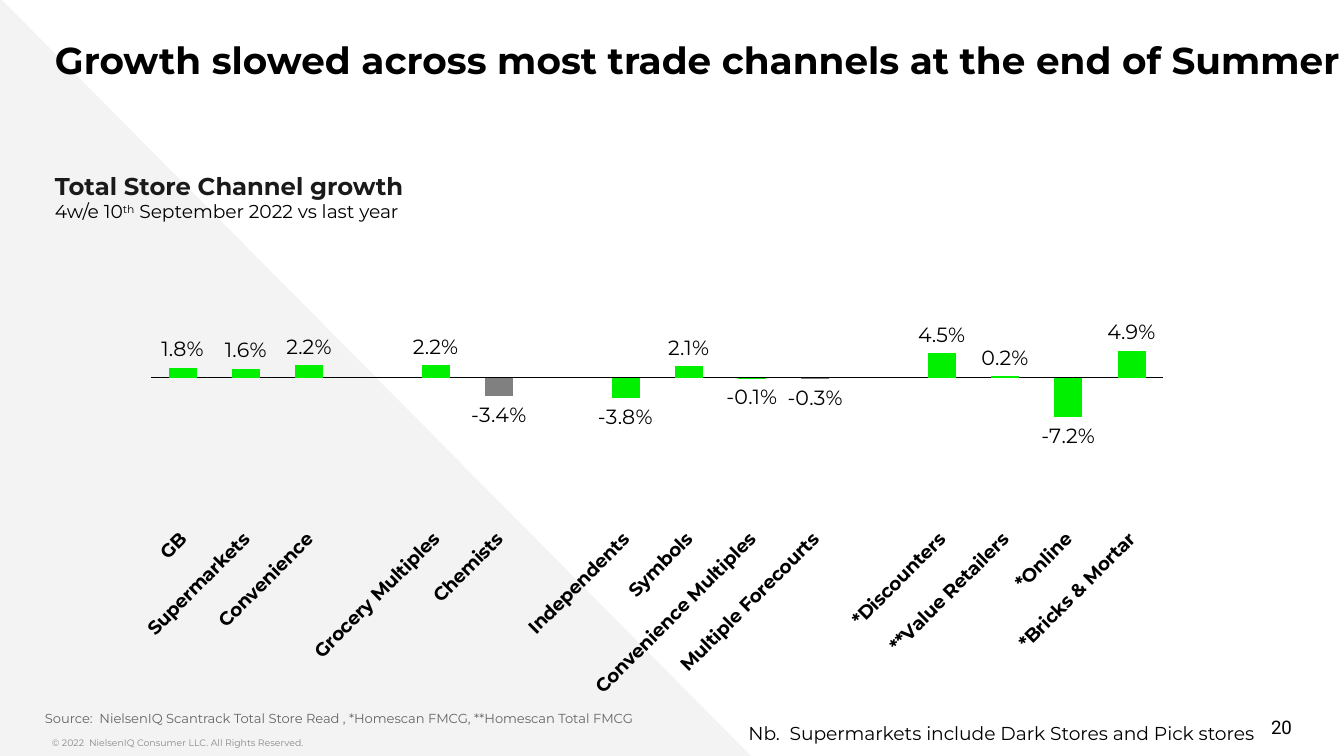
from lxml import etree
from pptx import Presentation
from pptx import util as u
from pptx.chart.data import CategoryChartData
from pptx.dml.color import RGBColor
from pptx.enum import chart as charts, shapes, text
from pptx.oxml import parse_xml
from pptx.oxml.ns import nsdecls

BLACK = RGBColor(0x00, 0x00, 0x00)
INK = RGBColor(0x1A, 0x1A, 0x1A)
GREY = RGBColor(0x66, 0x66, 0x66)
PALE_GREY = RGBColor(0x88, 0x88, 0x88)
BACKDROP = RGBColor(0xF3, 0xF3, 0xF3)
GREEN = RGBColor(0x00, 0xF0, 0x00)
BAR_GREY = RGBColor(0x80, 0x80, 0x80)
FONT = "Montserrat"

# Content
TITLE = "Growth slowed across most trade channels at the end of Summer"
HEADING = "Total Store Channel growth"
PERIOD = [("4w/e 10", False), ("th", True), (" September 2022 vs last year", False)]
SOURCE = "Source:  NielsenIQ Scantrack Total Store Read , *Homescan FMCG, **Homescan Total FMCG"
COPYRIGHT = "© 2022  NielsenIQ Consumer LLC. All Rights Reserved."
NOTE = "Nb.  Supermarkets include Dark Stores and Pick stores"
PAGE = "20"
GROWTH = [
    ("GB", 0.018), ("Supermarkets", 0.016), ("Convenience", 0.022), ("", None),
    ("Grocery Multiples", 0.022), ("Chemists", -0.034), ("", None),
    ("Independents", -0.038), ("Symbols", 0.021),
    ("Convenience Multiples", -0.001), ("Multiple Forecourts", -0.003), ("", None),
    ("*Discounters", 0.045), ("**Value Retailers", 0.002),
    ("*Online", -0.072), ("*Bricks & Mortar", 0.049),
]
GREY_BARS = {"Chemists", "Multiple Forecourts"}
PLOT_AREA = {"x": 0.04, "y": 0.02, "w": 0.96, "h": 0.58}
PERCENT = "0.0%"

EMU_PER_PX = 914400 / 134.4


def px(*lengths):
    return [u.Emu(round(length * EMU_PER_PX)) for length in lengths]


def style(font, size, color, bold=False, name=FONT):
    font.size, font.bold, font.name = u.Pt(size), bold, name
    font.color.rgb = color


def add_run(paragraph, words, *look, **options):
    run = paragraph.add_run()
    run.text = words
    style(run.font, *look, **options)
    return run


def set_frame(frame, side, top, wrap=True, anchor=text.MSO_ANCHOR.TOP):
    frame.margin_left, frame.margin_right = px(side, side)
    frame.margin_top, frame.margin_bottom = px(top, top)
    frame.word_wrap, frame.vertical_anchor = wrap, anchor
    frame.auto_size = text.MSO_AUTO_SIZE.NONE


def add_box(slide, box, side=0, top=7, align=text.PP_ALIGN.LEFT, **options):
    frame = slide.shapes.add_textbox(*px(*box)).text_frame
    set_frame(frame, side, top, **options)
    frame.paragraphs[0].alignment = align
    return frame.paragraphs[0]


presentation = Presentation()
presentation.slide_width, presentation.slide_height = px(1344, 756)
slide = presentation.slides.add_slide(presentation.slide_layouts[5])

# Backdrop triangle, behind the title
triangle = slide.shapes.add_shape(
    shapes.MSO_SHAPE.RIGHT_TRIANGLE, *px(0, -2, 751, 758))
triangle.shadow.inherit = False
triangle.fill.solid()
triangle.fill.fore_color.rgb = BACKDROP
triangle.line.fill.background()
title = slide.shapes.title
title.element.addprevious(triangle.element)

# Title
title.left, title.top, title.width, title.height = px(55, 24, 1289, 55)
set_frame(title.text_frame, 0, 13)
paragraph = title.text_frame.paragraphs[0]
paragraph.alignment = text.PP_ALIGN.LEFT
add_run(paragraph, TITLE, 20, BLACK, bold=True)

# Chart heading
paragraph = add_box(slide, (55, 164, 559, 66))
paragraph.space_after = u.Pt(12)
add_run(paragraph, HEADING, 13, INK, bold=True)
paragraph.add_line_break()
for words, raised in PERIOD:
    run = add_run(paragraph, words, 10, BLACK)
    if raised:
        run.font._element.set("baseline", "30000")

# Chart
data = CategoryChartData(number_format=PERCENT)
data.categories = [channel for channel, _ in GROWTH]
data.add_series("Series 1", [value for _, value in GROWTH])
chart = slide.shapes.add_chart(
    charts.XL_CHART_TYPE.COLUMN_CLUSTERED, *px(109, 231, 1055, 473), data).chart
chart.has_legend = chart.has_title = False
style(chart.font, 10, BLACK, name="Arial")

axis = chart.category_axis
axis.tick_label_position = charts.XL_TICK_LABEL_POSITION.LOW
axis.major_tick_mark = axis.minor_tick_mark = charts.XL_TICK_MARK.NONE
axis.format.line.color.rgb = BLACK
axis.format.line.width = u.Pt(0.75)
style(axis.tick_labels.font, 10, BLACK, bold=True)
axis._element.txPr.bodyPr.set("rot", str(-45 * 60000))

value_axis = chart.value_axis
value_axis.visible = value_axis.has_major_gridlines = False
value_axis.minimum_scale, value_axis.maximum_scale = -0.25, 0.25
value_axis.tick_labels.number_format = PERCENT
value_axis.tick_labels.number_format_is_linked = False

# Bars and their labels
plot = chart.plots[0]
plot.gap_width, plot.vary_by_categories = 125, False
series = plot.series[0]
series.invert_if_negative = False
series.format.fill.solid()
series.format.fill.fore_color.rgb = GREEN
for index, (channel, _) in enumerate(GROWTH):
    if channel in GREY_BARS:
        fill = series.points[index].format.fill
        fill.solid()
        fill.fore_color.rgb = BAR_GREY
labels = series.data_labels
labels.show_value = True
labels.position = charts.XL_LABEL_POSITION.OUTSIDE_END
labels.number_format, labels.number_format_is_linked = PERCENT, False
style(labels.font, 11, BLACK)

# Inner plot area as fractions of the chart
layout = parse_xml(
    f'<c:layout {nsdecls("c")}><c:manualLayout><c:layoutTarget val="inner"/>'
    '<c:xMode val="edge"/><c:yMode val="edge"/></c:manualLayout></c:layout>')
for key, value in PLOT_AREA.items():
    etree.SubElement(layout[0], layout.tag.replace("layout", key)).set("val", str(value))
plot_area = chart._chartSpace.chart.plotArea
for old in plot_area.findall(layout.tag):
    plot_area.remove(old)
plot_area.insert(0, layout)

# Source, copyright, note and page number
add_run(add_box(slide, (45, 698, 1178, 27), top=13), SOURCE, 7, GREY)
add_run(add_box(slide, (52, 730, 745, 27)), COPYRIGHT, 5, PALE_GREY)
add_run(add_box(slide, (722, 715, 545, 36), side=13, wrap=False,
                align=text.PP_ALIGN.RIGHT), NOTE, 10, BLACK)
add_run(add_box(slide, (989, 707, 303, 40), anchor=text.MSO_ANCHOR.MIDDLE,
                align=text.PP_ALIGN.RIGHT), PAGE, 10, BLACK, name="Roboto")

presentation.save("out.pptx")
